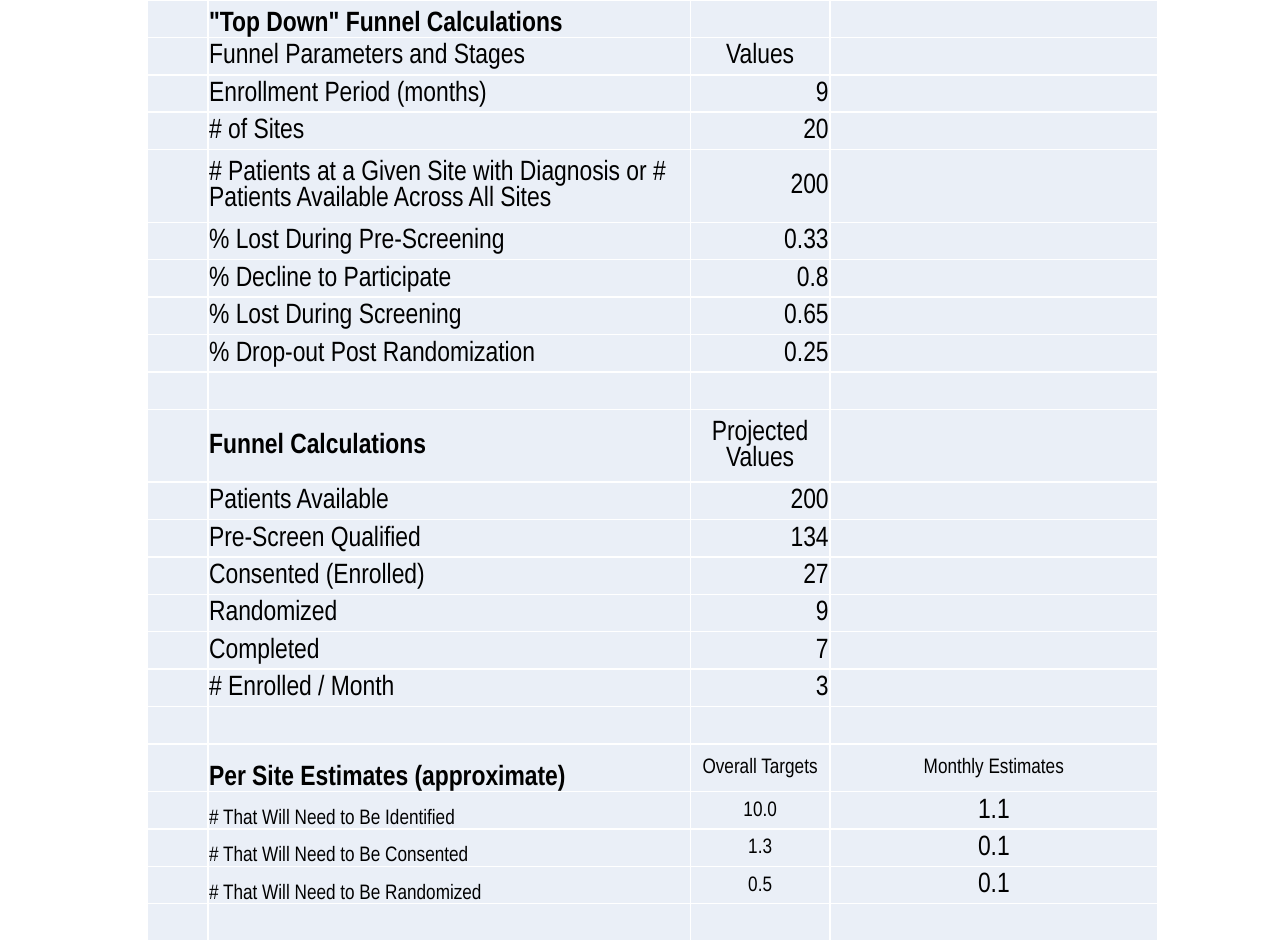
from lxml import etree
from pptx import Presentation
from pptx.dml.color import RGBColor
from pptx.enum.text import MSO_ANCHOR, PP_ALIGN
from pptx.oxml.ns import qn
from pptx.util import Pt

PX = 4572
SLIDE_WIDTH, SLIDE_HEIGHT = 2050, 1500
COLORS = {"cell": "EAEFF7", "border": "FFFFFF", "text": "000000"}
FONT = "Arial Narrow"
BODY, SMALL = 16, 12
LEFT, CENTER, RIGHT = PP_ALIGN.LEFT, PP_ALIGN.CENTER, PP_ALIGN.RIGHT
MIDDLE, BOTTOM = MSO_ANCHOR.MIDDLE, MSO_ANCHOR.BOTTOM
COLUMN_WIDTHS = [97, 768, 222, 522]
TALL_ROWS = {4: 116, 10: 116, 18: 76}

PARAMETERS = [
    ("Enrollment Period (months)", "9"),
    ("# of Sites", "20"),
    ("# Patients at a Given Site with Diagnosis or # Patients Available Across All Sites", "200"),
    ("% Lost During Pre-Screening", "0.33"),
    ("% Decline to Participate", "0.8"),
    ("% Lost During Screening", "0.65"),
    ("% Drop-out Post Randomization", "0.25"),
]
PROJECTIONS = [
    ("Patients Available", "200"),
    ("Pre-Screen Qualified", "134"),
    ("Consented (Enrolled)", "27"),
    ("Randomized", "9"),
    ("Completed", "7"),
    ("# Enrolled / Month", "3"),
]
SITE_ESTIMATES = [
    ("# That Will Need to Be Identified", "10.0", "1.1"),
    ("# That Will Need to Be Consented", "1.3", "0.1"),
    ("# That Will Need to Be Randomized", "0.5", "0.1"),
]


def label(text, size=BODY, bold=False, anchor=MIDDLE):
    """Describe a left-aligned cell."""
    return text, LEFT, size, bold, anchor


def value(text, align=CENTER, size=BODY):
    """Describe a value or column heading cell."""
    return text, align, size, False, MIDDLE


def funnel_rows():
    """List the cells of every row, from the second column on."""
    rows = [[label('"Top Down" Funnel Calculations', bold=True, anchor=BOTTOM)],
            [label("Funnel Parameters and Stages"), value("Values")]]
    rows += [[label(name), value(number, RIGHT)] for name, number in PARAMETERS]
    rows += [[], [label("Funnel Calculations", bold=True), value("Projected Values")]]
    rows += [[label(name), value(number, RIGHT)] for name, number in PROJECTIONS]
    rows += [[], [label("Per Site Estimates (approximate)", bold=True, anchor=BOTTOM),
                  value("Overall Targets", size=SMALL),
                  value("Monthly Estimates", size=SMALL)]]
    rows += [[label(name, SMALL, anchor=BOTTOM), value(overall, size=SMALL), value(monthly)]
             for name, overall, monthly in SITE_ESTIMATES]
    return rows + [[]]


def add_borders(cell):
    """Draw a thin line on the four sides of a cell."""
    properties = cell._tc.get_or_add_tcPr()
    for side in ("a:lnL", "a:lnR", "a:lnT", "a:lnB"):
        line = etree.SubElement(properties, qn(side), w=str(Pt(1)))
        fill = etree.SubElement(line, qn("a:solidFill"))
        etree.SubElement(fill, qn("a:srgbClr"), val=COLORS["border"])


def format_cell(cell, text, align, size, bold, anchor):
    """Write and style one table cell."""
    add_borders(cell)
    cell.fill.solid()
    cell.fill.fore_color.rgb = RGBColor.from_string(COLORS["cell"])
    cell.margin_left = cell.margin_right = cell.margin_top = 2 * PX
    cell.margin_bottom = 0
    cell.vertical_anchor = anchor
    para = cell.text_frame.paragraphs[0]
    if text:
        para.text = text
    para.alignment = align
    para.font.name = FONT
    para.font.size = Pt(size)
    para.font.bold = bold
    para.font.color.rgb = RGBColor.from_string(COLORS["text"])


def add_funnel_table(page, left, top, height):
    """Place the funnel table with its top left corner at the given point."""
    rows = funnel_rows()
    columns = len(COLUMN_WIDTHS)
    frame = page.shapes.add_table(len(rows), columns, left * PX, top * PX,
                                  sum(COLUMN_WIDTHS) * PX, height * PX)
    table = frame.table
    table.first_row = table.horz_banding = False
    for column, width in zip(table.columns, COLUMN_WIDTHS):
        column.width = width * PX
    plain_height = (height - sum(TALL_ROWS.values())) * PX // (len(rows) - len(TALL_ROWS))
    for index, entries in enumerate(rows):
        table.rows[index].height = TALL_ROWS[index] * PX if index in TALL_ROWS else plain_height
        cells = [label("")] + entries
        cells += [label("")] * (columns - len(cells))
        for column, entry in enumerate(cells):
            format_cell(table.cell(index, column), *entry)


def main():
    """Build the deck with its single page."""
    deck = Presentation()
    deck.slide_width = SLIDE_WIDTH * PX
    deck.slide_height = SLIDE_HEIGHT * PX
    page = deck.slides.add_slide(deck.slide_layouts[6])
    add_funnel_table(page, 234, 0, SLIDE_HEIGHT)
    deck.save("out.pptx")


if __name__ == "__main__":
    main()
